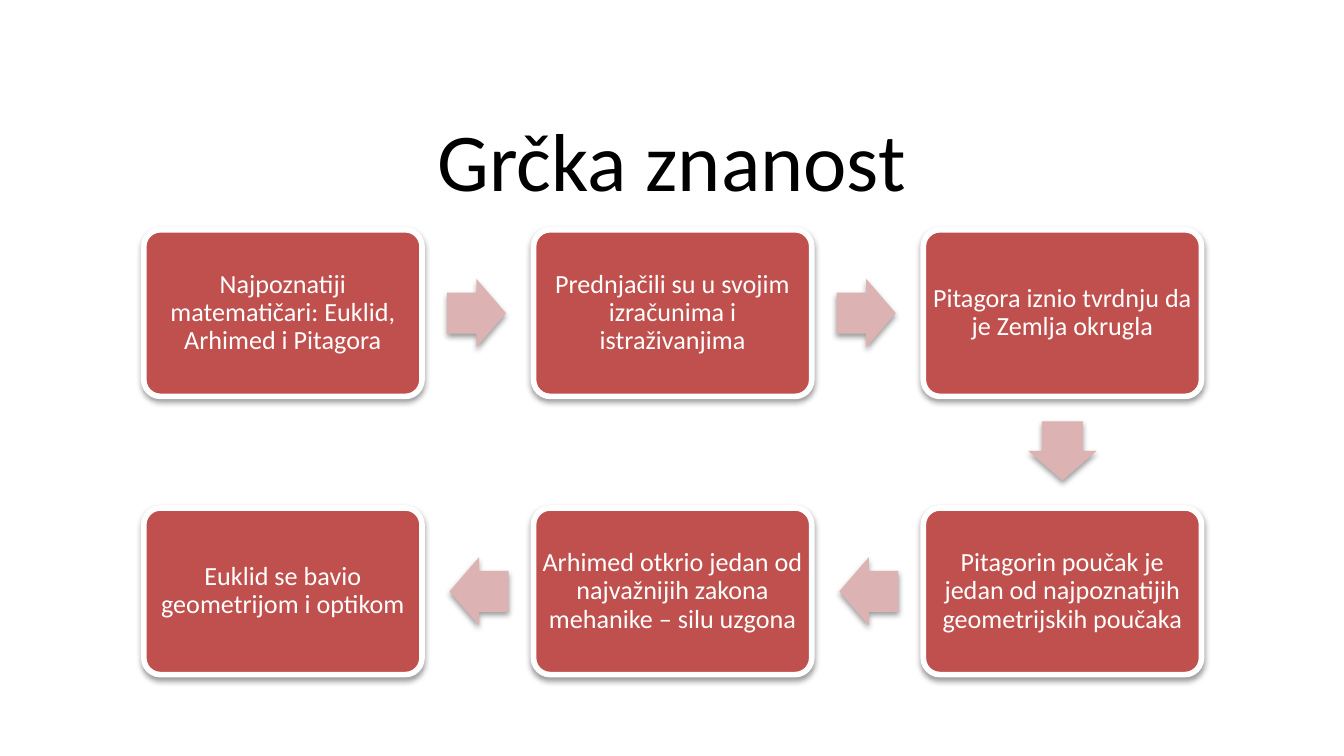
"""Build a slide with a six-step flow about Greek science."""
from itertools import pairwise
from math import atan2, cos, degrees, radians, sin

from lxml.etree import SubElement
from pptx import Presentation
from pptx.dml.color import RGBColor
from pptx.enum.shapes import MSO_SHAPE
from pptx.enum.text import MSO_ANCHOR, PP_ALIGN
from pptx.oxml.ns import qn
from pptx.util import Inches, Pt

BLACK = RGBColor(0x00, 0x00, 0x00)
WHITE = RGBColor(0xFF, 0xFF, 0xFF)
RED = RGBColor(0xC0, 0x50, 0x4D)
PINK = RGBColor(0xDC, 0xB3, 0xB2)

LEFT, TOP = 1.07, 1.71
COLUMN_PITCH, ROW_PITCH = 2.9, 2.07
BOX_WIDTH, BOX_HEIGHT = 2.07, 1.24
ARROW_WIDTH, ARROW_HEIGHT = 0.44, 0.51
ARROW_SETBACK = 0.01

STEPS = [
    (0, 0, "Najpoznatiji matematičari: Euklid, Arhimed i Pitagora"),
    (1, 0, "Prednjačili su u svojim izračunima i istraživanjima"),
    (2, 0, "Pitagora iznio tvrdnju da je Zemlja okrugla"),
    (2, 1, "Pitagorin poučak je jedan od najpoznatijih geometrijskih poučaka"),
    (1, 1, "Arhimed otkrio jedan od najvažnijih zakona mehanike – silu uzgona"),
    (0, 1, "Euklid se bavio geometrijom i optikom"),
]


def write_text(shape, text, size, color, inset, font="Calibri"):
    """Put one centred paragraph into a shape."""
    frame = shape.text_frame
    frame.word_wrap = True
    frame.vertical_anchor = MSO_ANCHOR.MIDDLE
    frame.margin_left = frame.margin_right = Inches(inset)
    frame.margin_top = frame.margin_bottom = Inches(inset)
    paragraph = frame.paragraphs[0]
    paragraph.text = text
    paragraph.alignment = PP_ALIGN.CENTER
    paragraph.line_spacing = 0.9
    paragraph.font.name = font
    paragraph.font.size = Pt(size)
    paragraph.font.color.rgb = color


class FlowSlide:
    """Hold the style and the current slide."""

    def __init__(self, slide, font="Calibri"):
        """Keep the slide and its font."""
        self.slide = slide
        self.font = font

    def title(self, text):
        """Add the slide title."""
        shape = self.slide.shapes.add_textbox(Inches(0.5), Inches(0.84), Inches(9), Inches(0.78))
        write_text(shape, text, size=44, color=BLACK, inset=0.05, font=self.font)

    def shadowed_shape(self, kind, left, top, width, height, fill, adjustments):
        """Add a filled preset shape with a soft shadow below it."""
        shape = self.slide.shapes.add_shape(
            kind, Inches(left), Inches(top), Inches(width), Inches(height))
        for index, value in enumerate(adjustments):
            shape.adjustments[index] = value
        shape.fill.solid()
        shape.fill.fore_color.rgb = fill
        shape.line.fill.background()
        shape.shadow.inherit = False
        effects = shape.element.spPr.find(qn("a:effectLst"))
        shadow = SubElement(
            effects, qn("a:outerShdw"), blurRad=str(Pt(3.1)), dist=str(Pt(1.6)),
            dir="5400000", rotWithShape="0")
        color = SubElement(shadow, qn("a:srgbClr"), val="000000")
        SubElement(color, qn("a:alpha"), val="38000")
        return shape

    def box(self, column, row, text):
        """Add one step and return its centre."""
        left = LEFT + column * COLUMN_PITCH
        top = TOP + row * ROW_PITCH
        shape = self.shadowed_shape(
            MSO_SHAPE.ROUNDED_RECTANGLE, left, top, BOX_WIDTH, BOX_HEIGHT, RED, [0.1])
        shape.line.color.rgb = WHITE
        shape.line.width = Pt(3)
        write_text(shape, text, size=14, color=WHITE, inset=0.02, font=self.font)
        return left + BOX_WIDTH / 2, top + BOX_HEIGHT / 2

    def arrow(self, start, end):
        """Add an arrow midway between two step centres."""
        angle = degrees(atan2(end[1] - start[1], end[0] - start[0]))
        center_x = (start[0] + end[0]) / 2 - ARROW_SETBACK * cos(radians(angle))
        center_y = (start[1] + end[1]) / 2 - ARROW_SETBACK * sin(radians(angle))
        shape = self.shadowed_shape(
            MSO_SHAPE.RIGHT_ARROW, center_x - ARROW_WIDTH / 2, center_y - ARROW_HEIGHT / 2,
            ARROW_WIDTH, ARROW_HEIGHT, PINK, [0.6, 0.5])
        shape.rotation = angle


def main():
    """Create the presentation and save it."""
    presentation = Presentation()
    presentation.slide_width = Inches(10)
    presentation.slide_height = Inches(10 * 9 / 16)
    flow = FlowSlide(presentation.slides.add_slide(presentation.slide_layouts[6]))
    flow.title("Grčka znanost")
    centers = [flow.box(column, row, text) for column, row, text in STEPS]
    for start, end in pairwise(centers):
        flow.arrow(start, end)
    presentation.save("out.pptx")


if __name__ == "__main__":
    main()
